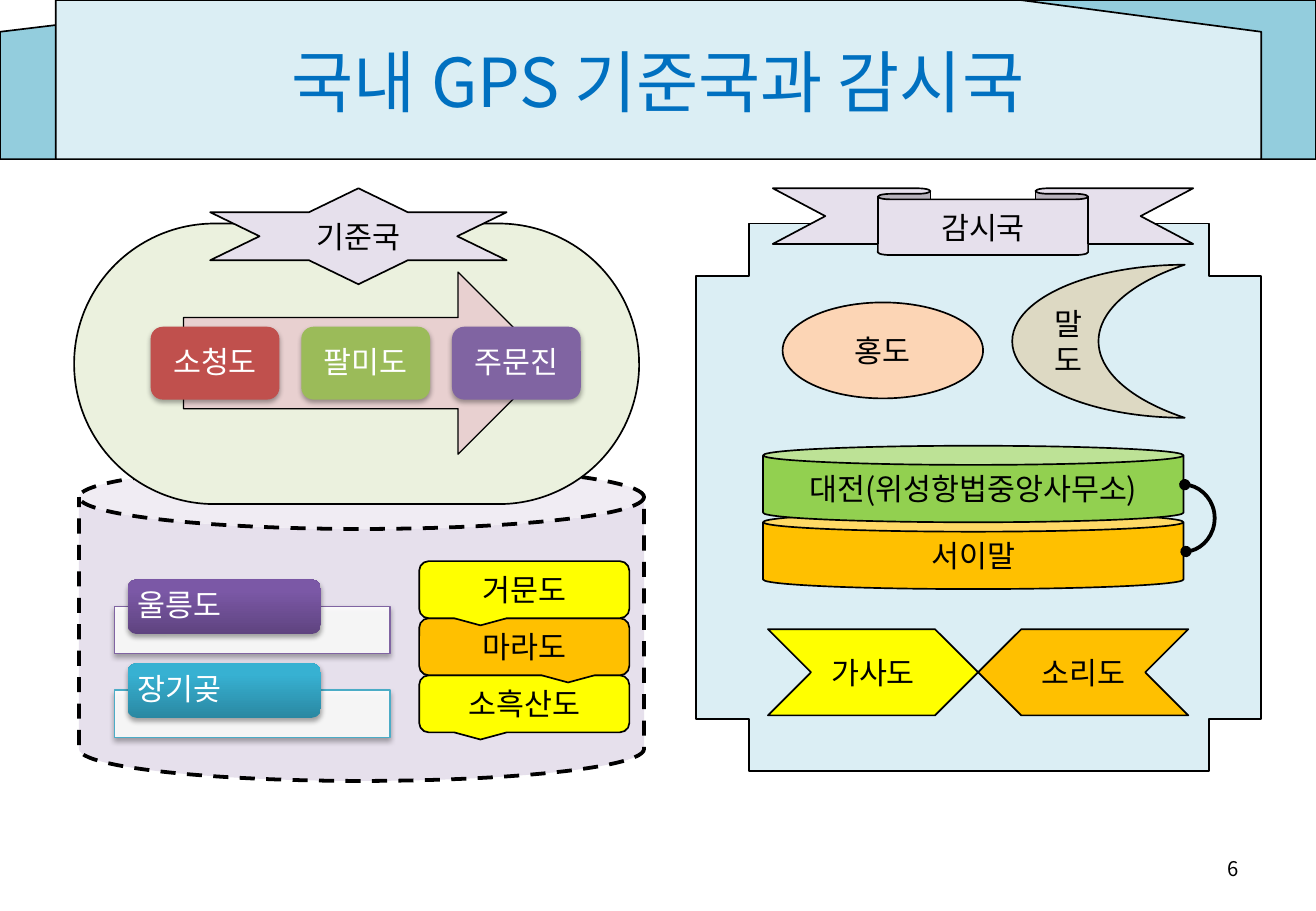
"""Builds the slide on domestic GPS reference and monitoring stations."""
from lxml.etree import SubElement
from pptx import Presentation
from pptx.dml.color import RGBColor
from pptx.enum.dml import MSO_LINE
from pptx.enum.shapes import MSO_CONNECTOR as Connector, MSO_SHAPE as Shape
from pptx.enum.text import MSO_ANCHOR as Anchor, PP_ALIGN as Align
from pptx.oxml.ns import qn
from pptx.util import Inches, Pt

BLACK = RGBColor(0x00, 0x00, 0x00)
WHITE = RGBColor(0xFF, 0xFF, 0xFF)
TITLE_BLUE = RGBColor(0x00, 0x70, 0xC0)
TEAL = RGBColor(0x93, 0xCD, 0xDD)
PALE_BLUE = RGBColor(0xDB, 0xEE, 0xF4)
LILAC = RGBColor(0xE6, 0xE0, 0xEC)
PALE_GREEN = RGBColor(0xEB, 0xF1, 0xDE)
PINK = RGBColor(0xE8, 0xD0, 0xD0)
RED = RGBColor(0xC0, 0x50, 0x4D)
OLIVE = RGBColor(0x9B, 0xBB, 0x59)
PURPLE = RGBColor(0x80, 0x64, 0xA2)
AQUA = RGBColor(0x4B, 0xAC, 0xC6)
PURPLE_DARK = RGBColor(0x5F, 0x44, 0x80)
PURPLE_LIGHT = RGBColor(0x7B, 0x58, 0xA6)
AQUA_DARK = RGBColor(0x2A, 0x88, 0xA2)
AQUA_LIGHT = RGBColor(0x37, 0xB1, 0xD2)
YELLOW = RGBColor(0xFF, 0xFF, 0x00)
ORANGE = RGBColor(0xFF, 0xC0, 0x00)
GREEN = RGBColor(0x92, 0xD0, 0x50)
PEACH = RGBColor(0xFC, 0xD5, 0xB5)
SAND = RGBColor(0xDD, 0xD9, 0xC3)

FONT = "Noto Sans CJK KR"
SLIDE_W, SLIDE_H = 10.83, 7.5
TITLE = "국내 GPS 기준국과 감시국"
PAGE = "6"
REFERENCE, MONITORING = "기준국", "감시국"
ARROW_STATIONS = [("소청도", RED), ("팔미도", OLIVE), ("주문진", PURPLE)]
TAB_STATIONS = [("울릉도", PURPLE, PURPLE_DARK, PURPLE_LIGHT),
                ("장기곶", AQUA, AQUA_DARK, AQUA_LIGHT)]
CALLOUT_STATIONS = [("거문도", YELLOW), ("마라도", ORANGE), ("소흑산도", YELLOW)]
CAN_STATIONS = [("대전(위성항법중앙사무소)", GREEN), ("서이말", ORANGE)]
CHEVRON_STATIONS = [("가사도", YELLOW), ("소리도", ORANGE)]

PANEL_W, PANEL_TOP = 4.65, 1.84
LEFT_X, RIGHT_X = 0.61, 5.73
BANNER_TOP, BANNER_H = 1.55, 1.31
ARROW_PITCH, TAB_PITCH, CALLOUT_PITCH, CAN_PITCH = 1.24, 0.69, 0.47, 0.55
CAN_X, CAN_W, CAN_TOP = 6.28, 3.46, 3.67
CHEVRON_W = CAN_W / 2


def write(frame, text, size=18, color=BLACK, align=Align.CENTER, spacing=None):
    frame.text = text
    frame.vertical_anchor = Anchor.MIDDLE
    for paragraph in frame.paragraphs:
        paragraph.alignment = align
        if spacing:
            paragraph.line_spacing = spacing
        font = paragraph.font
        font.size, font.name = Pt(size), FONT
        font.color.rgb = color
        SubElement(font._rPr, qn("a:ea"), typeface=FONT)


def place(shapes, kind, box, fill, line=BLACK, width=1, adj=None, flip=False, text=None):
    shape = shapes.add_shape(kind, *map(Inches, box))
    shape.shadow.inherit = False
    shape.fill.solid()
    shape.fill.fore_color.rgb = fill
    if line is None:
        shape.line.fill.background()
    else:
        shape.line.color.rgb = line
        shape.line.width = Pt(width)
    if adj is not None:
        shape.adjustments[0] = adj
    if flip:
        shape._element.spPr.find(qn("a:xfrm")).set("flipH", "1")
    if text:
        write(shape.text_frame, text)
        shape.text_frame.word_wrap = False
    return shape


def cast_shadow(shape):
    effects = shape._element.spPr.find(qn("a:effectLst"))
    shadow = SubElement(effects, qn("a:outerShdw"), blurRad=str(Pt(3.1)),
                        dist=str(Pt(1.8)), dir="5400000", rotWithShape="0")
    tint = SubElement(shadow, qn("a:srgbClr"), val=str(BLACK))
    SubElement(tint, qn("a:alpha"), val="35000")


def build_header(slide):
    place(slide.shapes, Shape.FLOWCHART_CARD, (0, 0, SLIDE_W, BANNER_H), TEAL)
    place(slide.shapes, Shape.FLOWCHART_CARD, (0.46, 0, 9.92, BANNER_H), PALE_BLUE, flip=True)
    title = slide.shapes.title
    slide.shapes._spTree.append(title._element)
    title.left, title.top, title.width, title.height = map(Inches, (0.54, 0.04, 9.75, 1.25))
    write(title.text_frame, TITLE, 40, TITLE_BLUE)
    page = slide.shapes.add_textbox(*map(Inches, (7.76, 6.95, 2.53, 0.4)))
    page.text_frame.word_wrap = True
    write(page.text_frame, PAGE, 12, align=Align.RIGHT)


def build_reference(shapes):
    drum = place(shapes, Shape.CAN, (LEFT_X + 0.04, 3.83, PANEL_W, 2.6), LILAC, width=2.25, adj=0.202)
    drum.line.dash_style = MSO_LINE.DASH
    place(shapes, Shape.ROUNDED_RECTANGLE, (LEFT_X, PANEL_TOP, PANEL_W, 2.31), PALE_GREEN, adj=0.5)
    place(shapes, Shape.STAR_6_POINT, (1.73, BANNER_TOP, 2.44, 0.79), LILAC, text=REFERENCE)
    place(shapes, Shape.RIGHT_ARROW, (1.51, 2.24, 3.01, 1.5), PINK, width=0.75)

    for col, (name, color) in enumerate(ARROW_STATIONS):
        pill = place(shapes, Shape.ROUNDED_RECTANGLE,
                     (1.24 + col * ARROW_PITCH, 2.69, 1.06, 0.6), color, line=None)
        cast_shadow(pill)
        write(pill.text_frame, name, color=WHITE, spacing=0.9)

    for row, (name, edge, dark, light) in enumerate(TAB_STATIONS):
        shift = row * TAB_PITCH
        card = place(shapes, Shape.RECTANGLE, (0.94, 4.99 + shift, 2.27, 0.39), WHITE, edge, 0.75)
        SubElement(card._element.spPr.find(qn("a:solidFill"))[0], qn("a:alpha"), val="90000")
        cast_shadow(card)
        tab = place(shapes, Shape.ROUNDED_RECTANGLE, (1.05, 4.77 + shift, 1.59, 0.45), dark, line=None)
        tab.fill.gradient()
        tab.fill.gradient_angle = 90
        for stop, color, position in zip(tab.fill.gradient_stops, (dark, light), (0, 0.8)):
            stop.color.rgb, stop.position = color, position
        cast_shadow(tab)
        write(tab.text_frame, name, color=WHITE, align=Align.LEFT, spacing=0.9)
        tab.text_frame.margin_left = Inches(0.06)
        tab.text_frame.margin_top = tab.text_frame.margin_bottom = 0

    for row, (name, color) in reversed(list(enumerate(CALLOUT_STATIONS))):
        place(shapes, Shape.ROUNDED_RECTANGULAR_CALLOUT,
              (3.45, 4.62 + row * CALLOUT_PITCH, 1.73, CALLOUT_PITCH),
              color, flip=row % 2 == 1, text=name)


def join_cans(shapes):
    x, y = CAN_X + CAN_W + 0.01, CAN_TOP + 0.32
    link = shapes.add_connector(Connector.CURVE, *map(Inches, (x, y, x + 0.01, y + CAN_PITCH)))
    link.line.color.rgb = BLACK
    link.line.width = Pt(2.25)
    properties = link._element.spPr
    guides = properties.find(qn("a:prstGeom")).find(qn("a:avLst"))
    SubElement(guides, qn("a:gd"), name="adj1", fmla="val 2500000")
    for end in ("a:headEnd", "a:tailEnd"):
        SubElement(properties.find(qn("a:ln")), qn(end), type="oval")
    SubElement(properties, qn("a:effectLst"))


def build_monitoring(shapes):
    place(shapes, Shape.CROSS, (RIGHT_X, PANEL_TOP, PANEL_W, 4.51), PALE_BLUE, adj=0.096)
    place(shapes, Shape.DOWN_RIBBON, (6.36, BANNER_TOP, CAN_W, 0.55), LILAC, text=MONITORING)
    place(shapes, Shape.OVAL, (6.44, 2.49, 1.65, 0.79), PEACH, text="홍도")
    place(shapes, Shape.MOON, (8.33, 2.18, 1.42, 1.26), SAND, text="말\n도")
    for row, (name, color) in reversed(list(enumerate(CAN_STATIONS))):
        place(shapes, Shape.CAN, (CAN_X, CAN_TOP + row * CAN_PITCH, CAN_W, 0.63), color, text=name)
    join_cans(shapes)
    for col, (name, color) in enumerate(CHEVRON_STATIONS):
        place(shapes, Shape.CHEVRON, (6.32 + col * CHEVRON_W, 5.18, CHEVRON_W, 0.71),
              color, flip=col == 1, text=name)


def main():
    deck = Presentation()
    deck.slide_width, deck.slide_height = Inches(SLIDE_W), Inches(SLIDE_H)
    slide = deck.slides.add_slide(deck.slide_layouts[5])
    build_header(slide)
    build_reference(slide.shapes.add_group_shape().shapes)
    build_monitoring(slide.shapes.add_group_shape().shapes)
    deck.save("out.pptx")


if __name__ == "__main__":
    main()
